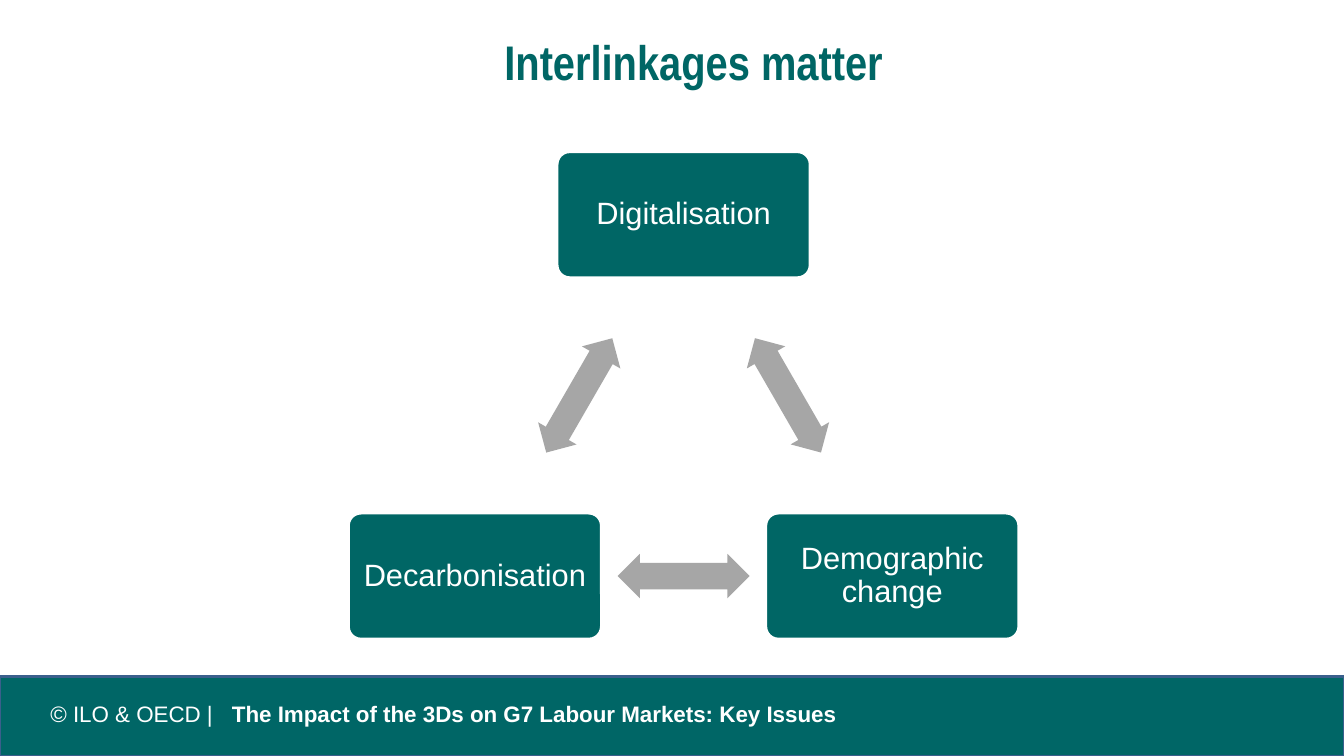
from math import cos, radians, sin, sqrt

from lxml import etree
from pptx import Presentation
from pptx.dml.color import RGBColor
from pptx.enum import shapes, text
from pptx.oxml import ns
from pptx.util import Inches, Pt

WIDE, HIGH = 13.33, 7.5
TEAL = RGBColor(0x00, 0x66, 0x65)
BAND = RGBColor(0x00, 0x66, 0x66)
EDGE = RGBColor(0x3A, 0x5F, 0x8C)
GREY = RGBColor(0xA6, 0xA6, 0xA6)
WHITE = RGBColor(0xFF, 0xFF, 0xFF)

# Triangle of topics: centre and distance from it to each corner
MID_X, MID_Y, RADIUS = 6.78, 4.52, 2.39
NODE = 2.51, 1.25
ARROW = 1.31, 0.44
TOPICS = ["Digitalisation", "Demographic change", "Decarbonisation"]


def style(font, name, size, color, bold=None):
    font.name, font.size, font.bold = name, Pt(size), bold
    font.color.rgb = color


def inset(frame, left, top, right, bottom):
    frame.margin_left, frame.margin_top = Inches(left), Inches(top)
    frame.margin_right, frame.margin_bottom = Inches(right), Inches(bottom)


def add_shape(slide, kind, x, y, size, fill, line=None):
    """Add a flat shape centred on (x, y)."""
    w, h = size
    shape = slide.shapes.add_shape(
        kind, Inches(x - w / 2), Inches(y - h / 2), Inches(w), Inches(h))
    shape.shadow.inherit = False
    shape.fill.solid()
    shape.fill.fore_color.rgb = fill
    if line is None:
        shape.line.fill.background()
    else:
        shape.line.color.rgb = line
        shape.line.width = Pt(2)
    return shape


def add_title(slide, words):
    title = slide.shapes.title
    title.left, title.top = Inches(0.58), Inches(0.25)
    title.width, title.height = Inches(12.6), Inches(0.96)
    frame = title.text_frame
    frame.text = words
    frame.auto_size = text.MSO_AUTO_SIZE.NONE
    frame.vertical_anchor = text.MSO_ANCHOR.TOP
    inset(frame, 0.13, 0.07, 0.13, 0.07)
    par = frame.paragraphs[0]
    par.alignment = text.PP_ALIGN.CENTER
    style(par.font, "Arial Narrow", 34.7, TEAL, True)


def add_node(slide, x, y, words):
    node = add_shape(slide, shapes.MSO_SHAPE.ROUNDED_RECTANGLE,
                     x, y, NODE, TEAL, WHITE)
    node.adjustments[0] = 0.1
    frame = node.text_frame
    frame.text = words
    frame.word_wrap = True
    frame.vertical_anchor = text.MSO_ANCHOR.MIDDLE
    inset(frame, 0.09, 0.09, 0.09, 0.09)
    par = frame.paragraphs[0]
    par.alignment = text.PP_ALIGN.CENTER
    par.line_spacing = 0.9
    style(par.font, "Arial", 22, WHITE)


def add_arrow(slide, x, y, turn):
    arrow = add_shape(slide, shapes.MSO_SHAPE.LEFT_RIGHT_ARROW,
                      x, y, ARROW, GREY)
    arrow.adjustments[0], arrow.adjustments[1] = 0.6, 0.5
    arrow.rotation = turn


def add_cycle(slide):
    """Place topics on the corners of a triangle and arrows on its sides."""
    side = RADIUS * sqrt(3)
    inner = side / (2 * sqrt(3))
    for i, topic in enumerate(TOPICS):
        angle = radians(120 * i - 90)
        add_node(slide, MID_X + RADIUS * cos(angle),
                 MID_Y + RADIUS * sin(angle), topic)
        angle += radians(60)
        add_arrow(slide, MID_X + inner * cos(angle),
                  MID_Y + inner * sin(angle), 60 + 120 * i)


def add_footer(slide, owner, name):
    add_shape(slide, shapes.MSO_SHAPE.RECTANGLE, WIDE / 2, 7.11,
              (WIDE, 0.79), BAND, EDGE)
    box = slide.shapes.add_textbox(
        Inches(0.37), Inches(6.94), Inches(9.69), Inches(0.28))
    frame = box.text_frame
    frame.word_wrap = True
    frame.vertical_anchor = text.MSO_ANCHOR.MIDDLE
    inset(frame, 0.13, 0, 0, 0)
    par = frame.paragraphs[0]
    tabs = etree.SubElement(par._p.get_or_add_pPr(), ns.qn("a:tabLst"))
    etree.SubElement(tabs, ns.qn("a:tab"), pos=str(Inches(1.8)), algn="l")
    style(par.font, "Arial", 16, WHITE)
    par.add_run().text = owner + "\t"
    run = par.add_run()
    run.text = name
    run.font.bold = True


def main():
    deck = Presentation()
    deck.slide_width, deck.slide_height = Inches(WIDE), Inches(HIGH)
    slide = deck.slides.add_slide(deck.slide_layouts[5])
    add_footer(slide, "© ILO & OECD |",
               "The Impact of the 3Ds on G7 Labour Markets: Key Issues")
    add_title(slide, "Interlinkages matter")
    add_cycle(slide)
    deck.save("out.pptx")


if __name__ == "__main__":
    main()
